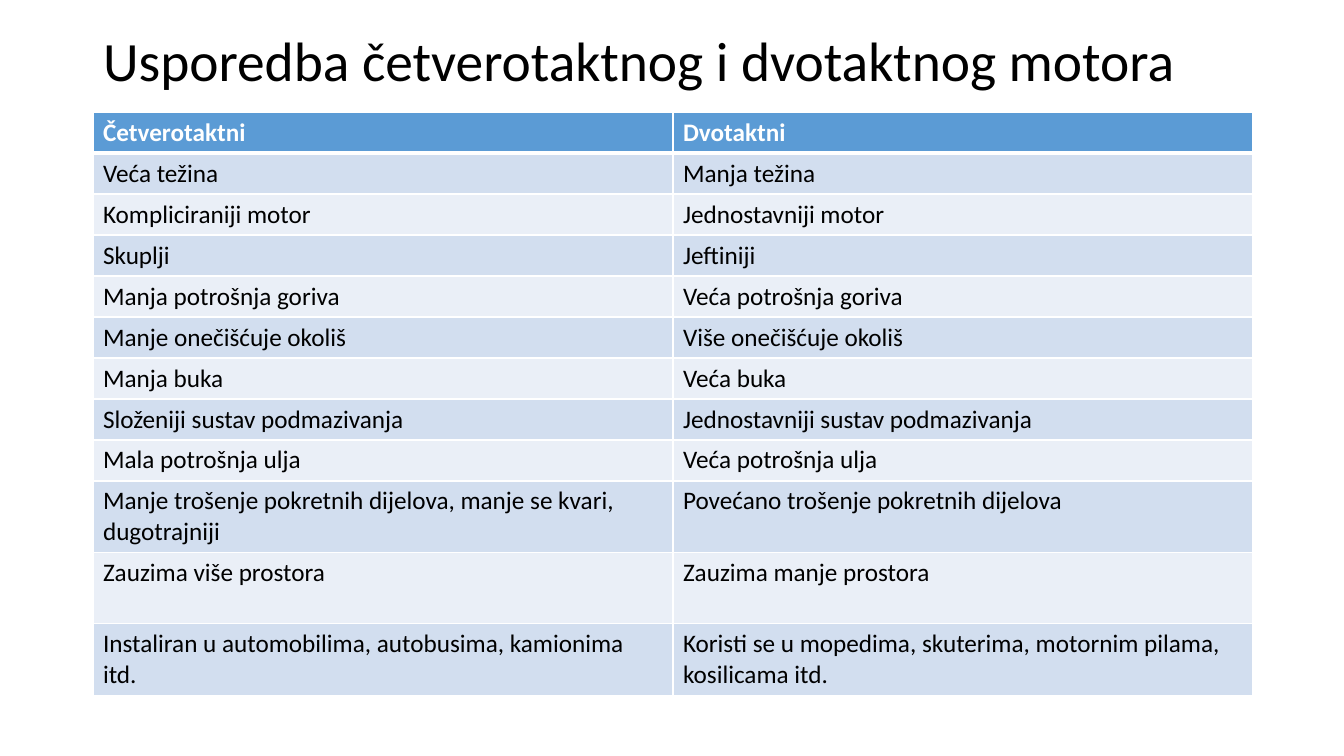
"""Build a slide comparing four-stroke and two-stroke engines."""
from typing import Any, NamedTuple

from lxml import etree
from pptx import Presentation
from pptx.dml.color import RGBColor
from pptx.enum.text import MSO_ANCHOR, MSO_AUTO_SIZE
from pptx.oxml.ns import qn
from pptx.util import Emu, Pt

MIDDLE = MSO_ANCHOR.MIDDLE
NO_AUTOFIT = MSO_AUTO_SIZE.NONE
EMU_PER_PX = 914400 / 100.8
TITLE_ONLY = 5
FONT = "Calibri"
WHITE, BLACK = "FFFFFF", "000000"
HEADER_FILL = "5B9BD5"
BAND_FILLS = ("EAEFF7", "D2DEEF")
LEFT, TABLE_TOP, COLUMN_WIDTH = 93, 112, 580
ONE_LINE, TWO_LINES = 41, 71
BORDERS = ("lnL", "lnR", "lnT", "lnB")


class Comparison(NamedTuple):
    four_stroke: str
    two_stroke: str
    height: int = ONE_LINE


COMPARISONS = (
    Comparison("Četverotaktni", "Dvotaktni"),
    Comparison("Veća težina", "Manja težina"),
    Comparison("Kompliciraniji motor", "Jednostavniji motor"),
    Comparison("Skuplji", "Jeftiniji"),
    Comparison("Manja potrošnja goriva", "Veća potrošnja goriva"),
    Comparison("Manje onečišćuje okoliš", "Više onečišćuje okoliš"),
    Comparison("Manja buka", "Veća buka"),
    Comparison("Složeniji sustav podmazivanja", "Jednostavniji sustav podmazivanja"),
    Comparison("Mala potrošnja ulja", "Veća potrošnja ulja"),
    Comparison("Manje trošenje pokretnih dijelova, manje se kvari, dugotrajniji",
               "Povećano trošenje pokretnih dijelova", TWO_LINES),
    Comparison("Zauzima više prostora", "Zauzima manje prostora", TWO_LINES),
    Comparison("Instaliran u automobilima, autobusima, kamionima itd.",
               "Koristi se u mopedima, skuterima, motornim pilama, kosilicama itd.",
               TWO_LINES),
)


def px(length: int) -> Emu:
    return Emu(round(length * EMU_PER_PX))


def set_color(color_format: Any, color: str) -> None:
    color_format.rgb = RGBColor.from_string(color)


def apply_format(target: Any, values: dict[str, Any]) -> None:
    for attribute, value in values.items():
        setattr(target, attribute, value)


def format_font(font: Any, size: float, color: str, bold: bool) -> None:
    apply_format(font, {"name": FONT, "size": Pt(size), "bold": bold})
    set_color(font.color, color)


def add_borders(cell: Any, bottom_width: int) -> None:
    properties = cell._tc.get_or_add_tcPr()
    for index, side in enumerate(BORDERS):
        width = bottom_width if side == "lnB" else 1
        border = etree.Element(qn(f"a:{side}"), w=str(Pt(width)))
        fill = etree.SubElement(border, qn("a:solidFill"))
        etree.SubElement(fill, qn("a:srgbClr"), val=WHITE)
        properties.insert(index, border)


def fill_cell(cell: Any, wording: str, row: int) -> None:
    is_header = row == 0
    cell.text = wording
    cell.fill.solid()
    set_color(cell.fill.fore_color, HEADER_FILL if is_header else BAND_FILLS[row % 2])
    run = cell.text_frame.paragraphs[0].runs[0]
    format_font(run.font, 18, WHITE if is_header else BLACK, is_header)
    add_borders(cell, 3 if is_header else 1)


def add_title(slide: Any, wording: str) -> None:
    title = slide.shapes.title
    apply_format(title, {"left": px(LEFT), "top": px(40),
                         "width": px(2 * COLUMN_WIDTH), "height": px(48)})
    frame = title.text_frame
    frame.text = wording
    apply_format(frame, {"word_wrap": True, "auto_size": NO_AUTOFIT,
                         "vertical_anchor": MIDDLE})
    paragraph = frame.paragraphs[0]
    apply_format(paragraph, {"line_spacing": 0.9, "alignment": 1})
    format_font(paragraph.runs[0].font, 39.6, BLACK, False)


def add_comparison_table(slide: Any) -> None:
    height = sum(comparison.height for comparison in COMPARISONS)
    table = slide.shapes.add_table(len(COMPARISONS), 2, px(LEFT), px(TABLE_TOP),
                                   px(2 * COLUMN_WIDTH), px(height)).table
    for row, comparison in enumerate(COMPARISONS):
        table.rows[row].height = px(comparison.height)
        for column, wording in enumerate((comparison.four_stroke, comparison.two_stroke)):
            fill_cell(table.cell(row, column), wording, row)


def main() -> None:
    presentation = Presentation()
    apply_format(presentation, {"slide_width": px(1344), "slide_height": px(756)})
    slide = presentation.slides.add_slide(presentation.slide_layouts[TITLE_ONLY])
    add_title(slide, "Usporedba četverotaktnog i dvotaktnog motora")
    add_comparison_table(slide)
    presentation.save("out.pptx")


if __name__ == "__main__":
    main()
